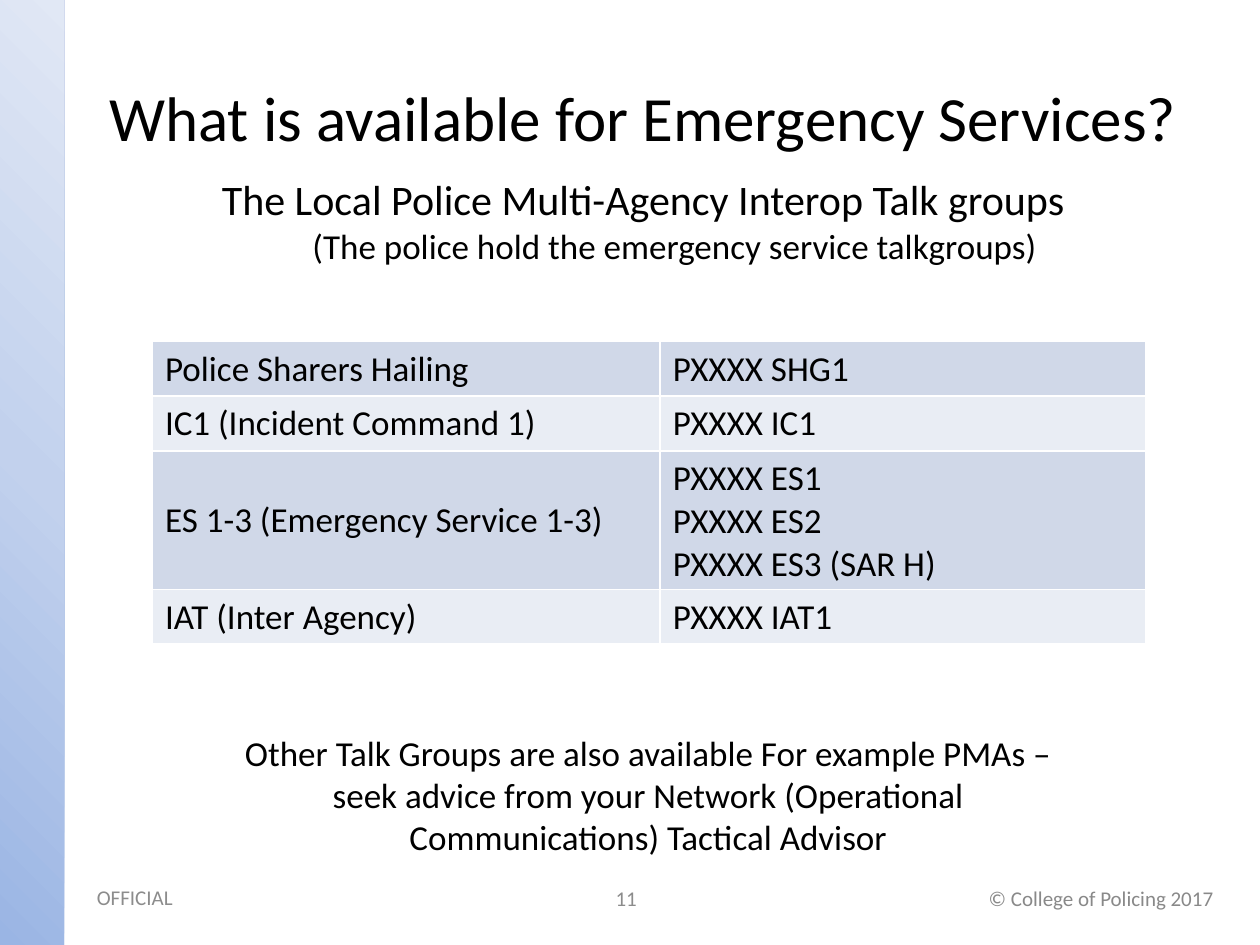
from copy import deepcopy
from dataclasses import dataclass

from lxml.etree import SubElement
from pptx import Presentation
from pptx.dml.color import RGBColor
from pptx.enum.shapes import MSO_SHAPE
from pptx.enum.text import MSO_ANCHOR, PP_ALIGN
from pptx.oxml.ns import qn
from pptx.util import Inches, Pt

FONT = "Calibri"
BLACK = "000000"
GREY = "8C8C8C"
BANDS = ("D0D8E8", "E9EDF4")


@dataclass
class Line:
    text: str
    size: int
    hue: str = BLACK
    indent: float = 0


@dataclass
class Box:
    left: float
    top: float
    width: float
    height: float
    lines: list[Line]
    align: PP_ALIGN = PP_ALIGN.CENTER
    anchor: MSO_ANCHOR = MSO_ANCHOR.TOP
    wrap: bool = True


@dataclass
class Row:
    name: str
    groups: list[str]
    height: float = 0.43


def color(code: str) -> RGBColor:
    return RGBColor.from_string(code)


def write(frame, lines: list[Line], align: PP_ALIGN) -> None:
    for i, line in enumerate(lines):
        para = frame.paragraphs[0] if i == 0 else frame.add_paragraph()
        para.alignment = align
        if line.indent:
            para._p.get_or_add_pPr().set("marL", str(Inches(line.indent)))
        run = para.add_run()
        run.text = line.text
        run.font.name = FONT
        run.font.size = Pt(line.size)
        run.font.color.rgb = color(line.hue)


def add_box(slide, box: Box) -> None:
    place = map(Inches, (box.left, box.top, box.width, box.height))
    frame = slide.shapes.add_textbox(*place).text_frame
    frame.word_wrap = box.wrap
    frame.vertical_anchor = box.anchor
    write(frame, box.lines, box.align)


def add_band(slide) -> None:
    band = slide.shapes.add_shape(
        MSO_SHAPE.RECTANGLE, 0, 0, Inches(0.51), Inches(7.5))
    band.shadow.inherit = False
    band.line.fill.background()
    band.fill.gradient()
    band.fill.gradient_angle = 45
    # A third stop makes room for the middle tone
    stops = band._element.spPr.find(".//" + qn("a:gsLst"))
    stops.append(deepcopy(stops[-1]))
    tones = ((0, "9AB5E4"), (0.5, "C2D1ED"), (1, "E1E8F5"))
    for stop, (pos, hue) in zip(band.fill.gradient_stops, tones):
        stop.position = pos
        stop.color.rgb = color(hue)


def edge(cell) -> None:
    props = cell._tc.get_or_add_tcPr()
    for i, side in enumerate(("lnL", "lnR", "lnT", "lnB")):
        line = props.makeelement(qn("a:" + side), {"w": str(Pt(1))})
        solid = SubElement(line, qn("a:solidFill"))
        SubElement(solid, qn("a:srgbClr"), val="FFFFFF")
        props.insert(i, line)


def add_grid(slide, rows: list[Row], widths: tuple[float, ...]) -> None:
    table = slide.shapes.add_table(
        len(rows), len(widths), Inches(1.21), Inches(2.71),
        Inches(sum(widths)), Inches(sum(r.height for r in rows))).table
    table.first_row = table.horz_banding = False
    for col, width in zip(table.columns, widths):
        col.width = Inches(width)
    for i, row in enumerate(rows):
        table.rows[i].height = Inches(row.height)
        for j, texts in enumerate(([row.name], row.groups)):
            cell = table.cell(i, j)
            cell.fill.solid()
            cell.fill.fore_color.rgb = color(BANDS[i % 2])
            edge(cell)
            if len(texts) < len(row.groups):
                cell.vertical_anchor = MSO_ANCHOR.MIDDLE
            write(cell.text_frame, [Line(t, 20) for t in texts],
                  PP_ALIGN.LEFT)


BOXES = [
    # Heading
    Box(0.67, 0.3, 8.87, 1.25,
        [Line("What is available for Emergency Services?", 36)],
        anchor=MSO_ANCHOR.MIDDLE),
    Box(0.99, 1.33, 8.23, 1.14, [
        Line("The Local Police Multi-Agency Interop Talk groups", 24),
        Line("(The police hold the emergency service talkgroups)", 20,
             indent=0.5)]),
    # Advice
    Box(1.56, 5.76, 7.17, 1.11, [
        Line("Other Talk Groups are also available For example PMAs – "
             "seek advice from your Network (Operational "
             "Communications) Tactical Advisor", 20)]),
    # Footer
    Box(0.67, 6.97, 0.81, 0.3, [Line("OFFICIAL", 12, GREY)],
        PP_ALIGN.LEFT, wrap=False),
    Box(4.61, 6.93, 0.72, 0.4, [Line("11", 12, GREY)],
        anchor=MSO_ANCHOR.MIDDLE),
    Box(7.6, 6.93, 2.13, 0.4,
        [Line("© College of Policing 2017", 12, "898989")],
        PP_ALIGN.RIGHT, MSO_ANCHOR.MIDDLE),
]

ROWS = [
    Row("Police Sharers Hailing", ["PXXXX SHG1"]),
    Row("IC1 (Incident Command 1)", ["PXXXX IC1"]),
    Row("ES 1-3 (Emergency Service 1-3)",
        ["PXXXX ES1", "PXXXX ES2", "PXXXX ES3 (SAR H)"], 1.1),
    Row("IAT (Inter Agency)", ["PXXXX IAT1"]),
]


def main() -> None:
    deck = Presentation()
    deck.slide_width, deck.slide_height = Inches(10), Inches(7.5)
    slide = deck.slides.add_slide(deck.slide_layouts[6])
    add_band(slide)
    for box in BOXES:
        add_box(slide, box)
    add_grid(slide, ROWS, (4.03, 3.85))
    deck.save("out.pptx")


if __name__ == "__main__":
    main()
